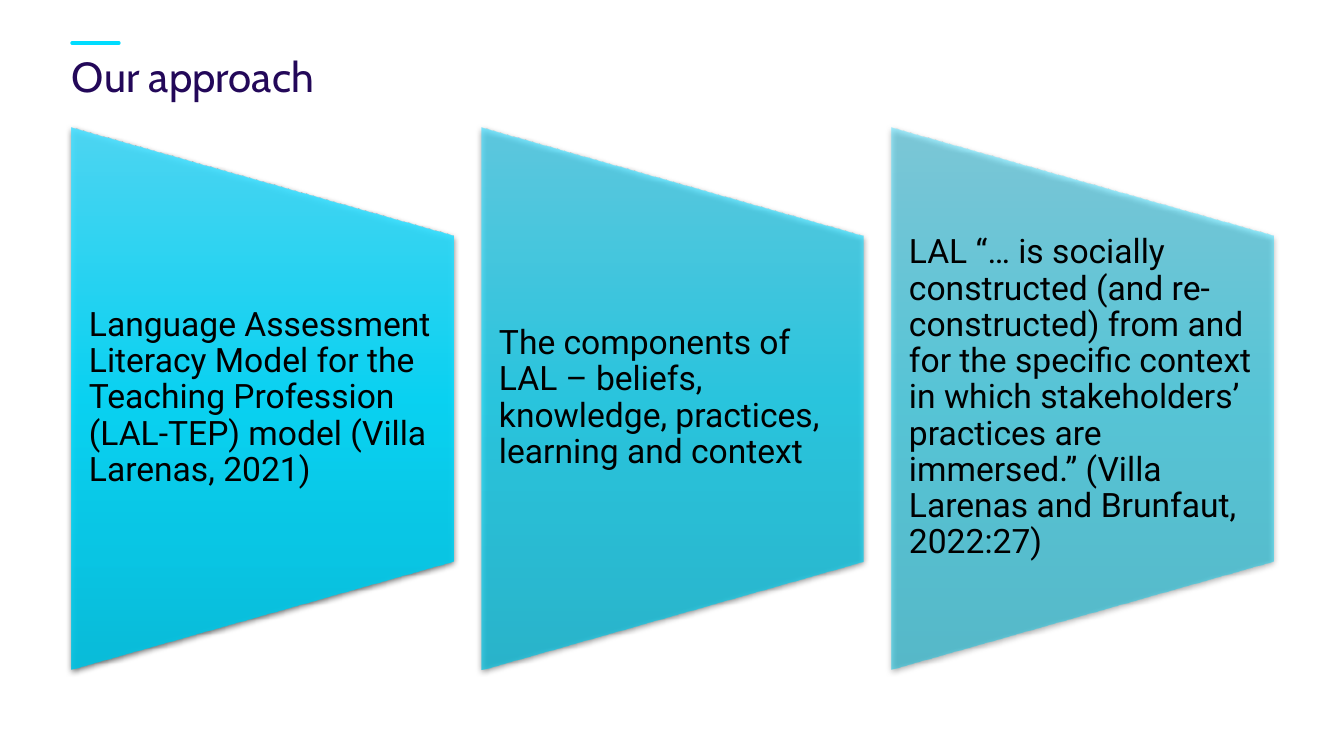
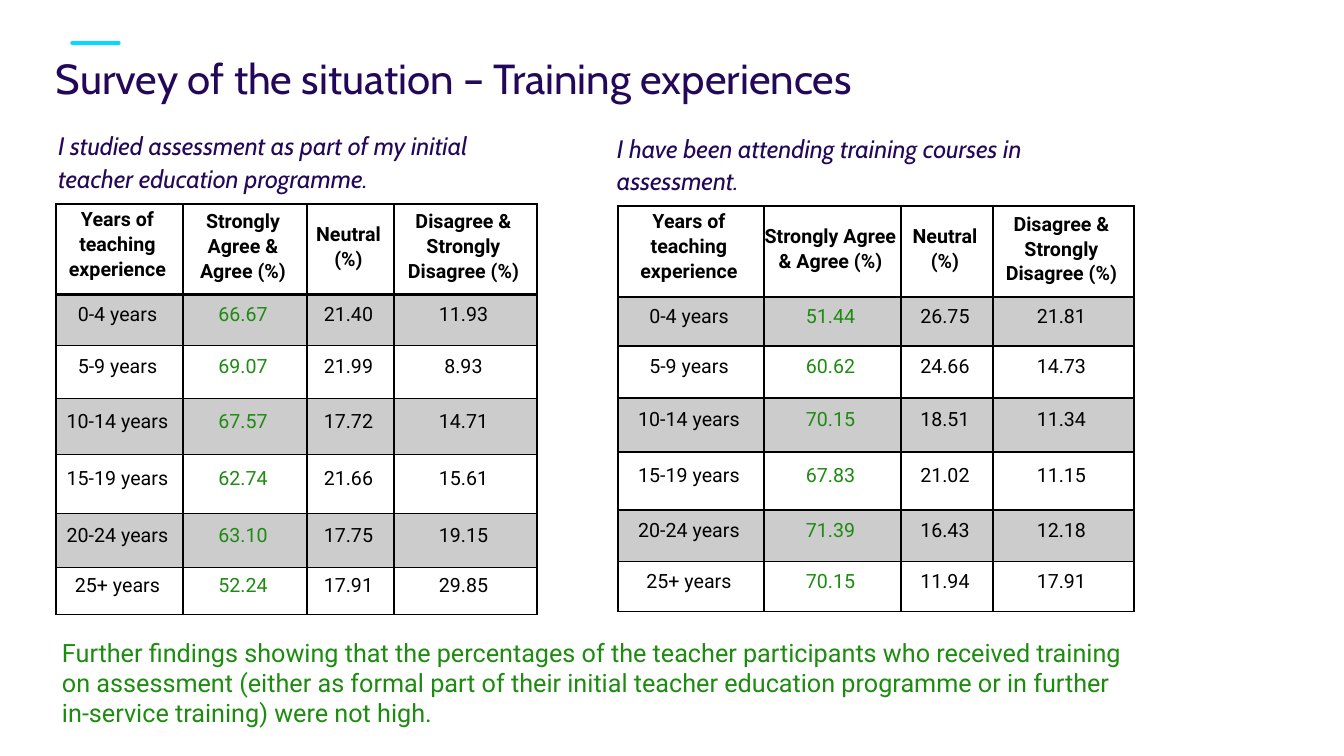
from lxml.etree import SubElement
from pptx import Presentation
from pptx.dml.color import RGBColor as RGB
from pptx.enum.shapes import MSO_CONNECTOR as LINK, MSO_SHAPE as SHAPE
from pptx.enum.text import MSO_ANCHOR as ANCHOR, PP_ALIGN as ALIGN
from pptx.oxml import parse_xml
from pptx.oxml.ns import nsdecls, qn
from pptx.util import Pt

SCALE = 914400 / 100.8
NAVY = RGB(0x23, 0x08, 0x59)
CYAN = RGB(0x00, 0xDC, 0xFF)
PALE = RGB(0x4B, 0xDF, 0xFF)
TEAL = RGB(0x00, 0xC3, 0xE3)
GREEN = RGB(0x1D, 0x8B, 0x10)
BLACK = RGB(0, 0, 0)
WHITE = RGB(255, 255, 255)
GREY = RGB(0xCC, 0xCC, 0xCC)

TITLE = dict(name="Cabin", size=Pt(30), bold=False)
LEAD = dict(name="Cabin", size=Pt(18), italic=True)
PANEL = dict(name="Roboto", size=Pt(24))
NOTE = dict(name="Roboto", size=Pt(18))
HEAD = dict(name="Roboto", size=Pt(14), bold=True)
CELL = dict(name="Roboto", size=Pt(14), bold=False)

NO_PAD = (0, 0, 0, 0)
TEXT_PAD = (10, 5, 10, 5)
CELL_PAD = (6, 2, 10, 13)
HEAD_PAD = (0, 2, 4, 8)


def px(value):
    return round(value * SCALE)


class Deck:
    def __init__(self):
        self.show = Presentation()
        self.show.slide_width, self.show.slide_height = px(1344), px(756)
        self.slide = None

    def page(self, title, x, y):
        self.slide = self.show.slides.add_slide(self.show.slide_layouts[5])
        self.rule(72, 43, 119, 43)
        head = self.slide.shapes.title
        self.place(head, x, y, 1207, 88)
        self.label(head.text_frame, title, TITLE, NAVY, NO_PAD, Pt(33))

    def place(self, shape, x, y, w, h):
        box = dict(left=x, top=y, width=w, height=h)
        for key, value in box.items():
            setattr(shape, key, px(value))

    def pad(self, owner, sides):
        for key, value in zip(("left", "top", "right", "bottom"), sides):
            setattr(owner, "margin_" + key, px(value))

    def style(self, para, text, font, color, gap, align):
        para.text = text
        para.alignment = align
        para.line_spacing = gap
        for key, value in font.items():
            setattr(para.font, key, value)
        para.font.color.rgb = color

    def label(self, frame, text, font, color, pad, gap, anchor=ANCHOR.TOP):
        frame.word_wrap = True
        frame.vertical_anchor = anchor
        self.pad(frame, pad)
        self.style(frame.paragraphs[0], text, font, color, gap, ALIGN.LEFT)

    def rule(self, x1, y1, x2, y2):
        line = self.slide.shapes.add_connector(
            LINK.STRAIGHT, px(x1), px(y1), px(x2), px(y2))
        line.line.color.rgb = CYAN
        line.line.width = Pt(2.4)
        props = line._element.spPr
        props.find(qn("a:ln")).set("cap", "rnd")
        SubElement(props, qn("a:effectLst"))

    def text(self, box, text, font, color, pad=TEXT_PAD, gap=1.0,
             anchor=ANCHOR.MIDDLE):
        shape = self.slide.shapes.add_textbox(*map(px, box))
        self.label(shape.text_frame, text, font, color, pad, gap, anchor)

    def panel(self, x, y, w, h, text, alpha):
        shape = self.slide.shapes.add_shape(
            SHAPE.FLOWCHART_MANUAL_OPERATION,
            px(x + (w - h) / 2), px(y + (h - w) / 2), px(h), px(w))
        shape.rotation = 270
        shape.line.fill.background()
        stops = "".join(
            f'<a:gs pos="{pos}000"><a:srgbClr val="{color}">'
            f'<a:alpha val="{alpha}000"/></a:srgbClr></a:gs>'
            for pos, color in ((0, PALE), (50, CYAN), (100, TEAL)))
        fill = parse_xml(
            f'<a:gradFill {nsdecls("a")} rotWithShape="0"><a:gsLst>{stops}'
            '</a:gsLst><a:lin ang="5400000" scaled="0"/></a:gradFill>')
        glow = parse_xml(
            f'<a:effectLst {nsdecls("a")}><a:outerShdw blurRad="57150" '
            'dist="19050" dir="5400000" algn="ctr" rotWithShape="0">'
            '<a:srgbClr val="000000"><a:alpha val="63000"/></a:srgbClr>'
            '</a:outerShdw></a:effectLst>')
        props = shape._element.spPr
        props.find(qn("a:prstGeom")).addnext(fill)
        props.append(glow)
        self.text((x, y + h // 5, w, h * 3 // 5), text, PANEL, BLACK,
                  (17, 0, 17, 0), 0.9)

    def edge(self, cell, top, low):
        props = cell._tc.get_or_add_tcPr()
        for spot, (side, width) in enumerate(
                (("L", 1), ("R", 1), ("T", top), ("B", low))):
            props.insert(spot, parse_xml(
                f'<a:ln{side} {nsdecls("a")} w="{Pt(width)}"><a:solidFill>'
                f'<a:srgbClr val="{BLACK}"/></a:solidFill></a:ln{side}>'))

    def table(self, x, y, cols, rows, data):
        grid = self.slide.shapes.add_table(
            len(rows), len(cols), px(x), px(y),
            px(sum(cols)), px(sum(rows))).table
        for col, width in zip(grid.columns, cols):
            col.width = px(width)
        for row, height in zip(grid.rows, rows):
            row.height = px(height)
        for r, line in enumerate(data):
            for c, value in enumerate(line):
                cell = grid.cell(r, c)
                cell.fill.solid()
                cell.fill.fore_color.rgb = GREY if r % 2 else WHITE
                cell.vertical_anchor = ANCHOR.MIDDLE
                tight = r == 0 and c > 0
                self.pad(cell, HEAD_PAD if tight else CELL_PAD)
                para = cell.text_frame.paragraphs[0]
                self.style(para, value, CELL if r else HEAD,
                           GREEN if r and c == 1 else BLACK, 1.07,
                           ALIGN.CENTER)
                para.space_after = Pt(0 if tight else 8)
                self.edge(cell, 2 if r == 1 else 1, 1 if r else 2)


HEADS = ("Years of teaching experience", "Strongly Agree & Agree (%)",
         "Neutral (%)", "Disagree & Strongly Disagree (%)")
YEARS = ("0-4 years", "5-9 years", "10-14 years", "15-19 years",
         "20-24 years", "25+ years")
PANELS = (
    ("Language Assessment Literacy Model for the Teaching Profession "
     "(LAL-TEP) model (Villa Larenas, 2021)", 90),
    ("The components of LAL – beliefs, knowledge, practices, learning "
     "and context", 70),
    ("LAL “… is socially constructed (and re-constructed) from and for the "
     "specific context in which stakeholders’ practices are immersed.” "
     "(Villa Larenas and Brunfaut, 2022:27)", 50),
)
SURVEYS = (
    ((48, 123, 495, 76),
     "I studied assessment as part of my initial teacher education programme.",
     (56, 204), (127, 124, 87, 143), (88, 51, 53, 56, 59, 54, 47),
     (("66.67", "21.40", "11.93"), ("69.07", "21.99", "8.93"),
      ("67.57", "17.72", "14.71"), ("62.74", "21.66", "15.61"),
      ("63.10", "17.75", "19.15"), ("52.24", "17.91", "29.85"))),
    ((607, 127, 515, 73),
     "I have been attending training courses in assessment.",
     (618, 206), (146, 137, 92, 141), (91, 49, 52, 54, 58, 52, 50),
     (("51.44", "26.75", "21.81"), ("60.62", "24.66", "14.73"),
      ("70.15", "18.51", "11.34"), ("67.83", "21.02", "11.15"),
      ("71.39", "16.43", "12.18"), ("70.15", "11.94", "17.91"))),
)


def main():
    deck = Deck()
    deck.page("Our approach", 72, 55)
    for i, (text, alpha) in enumerate(PANELS):
        deck.panel(72 + 410 * i, 128, 381, 541, text, alpha)

    deck.page("Survey of the situation – Training experiences", 56, 57)
    for box, lead, spot, cols, rows, rates in SURVEYS:
        deck.text(box, lead, LEAD, NAVY, gap=1.07)
        body = [(year, *rate) for year, rate in zip(YEARS, rates)]
        deck.table(*spot, cols, rows, [HEADS, *body])
    deck.text((52, 632, 1081, 109),
              "Further findings showing that the percentages of the teacher "
              "participants who received training on assessment (either as "
              "formal part of their initial teacher education programme or in "
              "further in-service training) were not high.",
              NOTE, GREEN, anchor=ANCHOR.TOP)
    deck.show.save("out.pptx")


if __name__ == "__main__":
    main()
